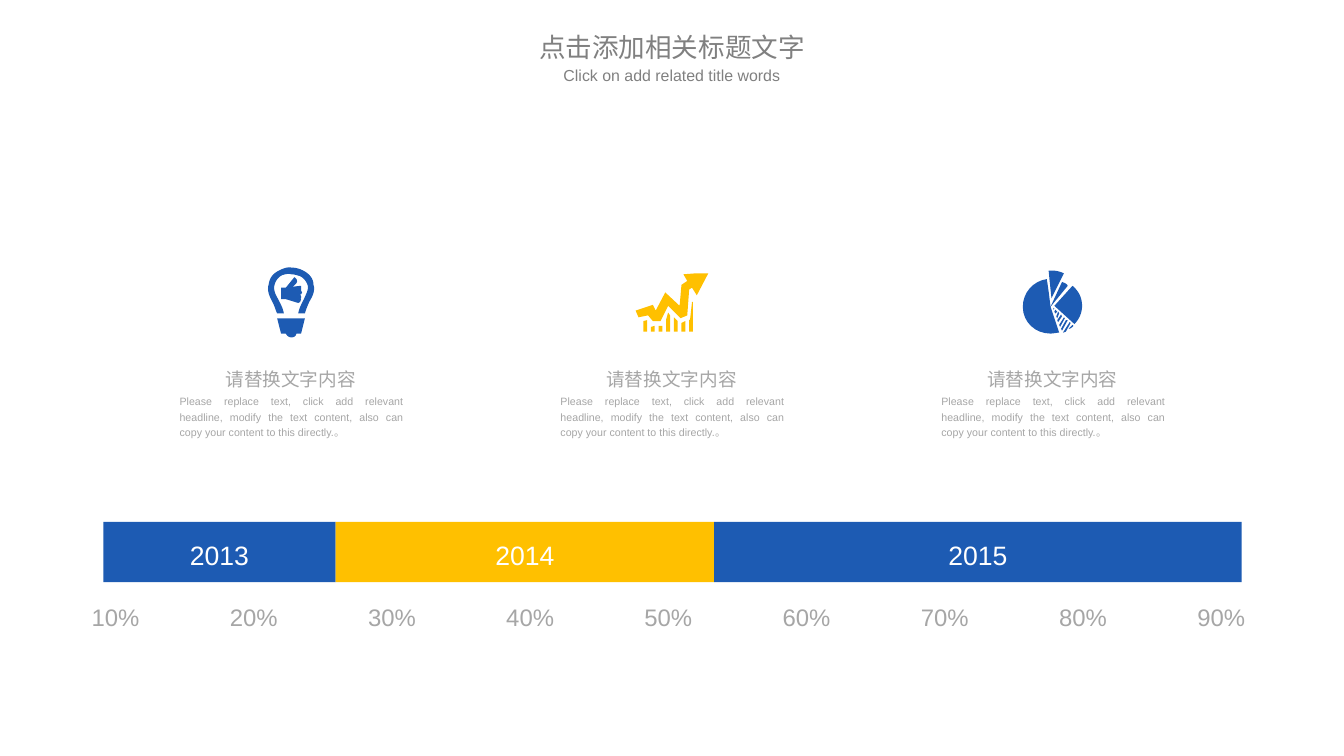
from dataclasses import dataclass

from lxml import etree
from pptx import Presentation
from pptx.dml.color import RGBColor
from pptx.enum.shapes import MSO_SHAPE
from pptx.enum.text import MSO_ANCHOR, MSO_AUTO_SIZE, PP_ALIGN
from pptx.oxml.ns import qn
from pptx.shapes.base import BaseShape
from pptx.slide import Slide
from pptx.text.text import TextFrame
from pptx.util import Pt

RECTANGLE = MSO_SHAPE.RECTANGLE
TOP, MIDDLE = MSO_ANCHOR.TOP, MSO_ANCHOR.MIDDLE
CENTER, JUSTIFY = PP_ALIGN.CENTER, PP_ALIGN.JUSTIFY
FIXED, GROW = MSO_AUTO_SIZE.NONE, MSO_AUTO_SIZE.SHAPE_TO_FIT_TEXT

Step = tuple[float, ...]
Contour = list[Step]


@dataclass(frozen=True)
class Theme:
    blue: str = "1D5BB3"
    gold: str = "FFC000"
    title: str = "808080"
    muted: str = "A6A6A6"
    white: str = "FFFFFF"
    latin: str = "Arial"
    chinese: str = "Noto Sans CJK SC"
    title_size: float = 20
    subtitle_size: float = 12
    year_size: float = 20
    percent_size: float = 18
    heading_size: float = 14
    body_size: float = 8
    line_spacing: float = 1.2


@dataclass(frozen=True)
class Box:
    left: float
    top: float
    width: float
    height: float


@dataclass(frozen=True)
class Icon:
    left: float
    top: float
    color: str
    contours: list[Contour]


@dataclass(frozen=True)
class Period:
    year: str
    width: float
    color: str


THEME = Theme()
SLIDE_WIDTH, SLIDE_HEIGHT = 1012.3, 569.5
ICON_UNIT = 0.72
CURVE_STEPS = 8
COLUMN_COUNT, COLUMN_PITCH = 3, 286.9
PERCENT_PITCH = 104.1
BAR_LEFT, BAR_TOP, BAR_HEIGHT = 77.8, 393.1, 45.4
HEADING = "请替换文字内容"
BODY = ("Please replace text, click add relevant headline, modify the text content, "
        "also can copy your content to this directly.。")

PERIODS = [
    Period("2013", 175, THEME.blue),
    Period("2014", 285.1, THEME.gold),
    Period("2015", 397.4, THEME.blue),
]

BULB: list[Contour] = [
    [(11, 54), (40, 54), (36, 70), (31, 70), (31, 72, 29, 74, 26, 74),
     (23, 74, 21, 72, 20, 70), (15, 70)],
    [(36, 20), (36, 25), (37, 27), (36, 29), (35, 29), (36, 31), (36, 33), (35, 34),
     (36, 34), (35, 37), (33, 38), (20, 34), (15, 34), (15, 22), (20, 22), (29, 11),
     (35, 15, 30, 19, 27, 21)],
    [(11, 49), (18, 49), (17, 43, 14, 38, 12, 34), (9, 29, 7, 24, 8, 20),
     (9, 15, 12, 11, 16, 9), (19, 8, 22, 7, 26, 8), (29, 8, 32, 9, 35, 10),
     (39, 12, 42, 16, 43, 20), (44, 24, 41, 29, 39, 34), (37, 38, 34, 43, 33, 49),
     (40, 49), (41, 45, 43, 40, 45, 36), (48, 31, 51, 25, 49, 19),
     (49, 12, 44, 7, 38, 4), (34, 2, 30, 1, 26, 1), (22, 0, 17, 2, 13, 4),
     (7, 7, 3, 11, 2, 19), (0, 25, 3, 31, 6, 37), (8, 40, 9, 45, 11, 49)],
]

ARROW: Contour = [
    (76, 0), (64, 23), (59, 15), (56, 17), (54, 44), (47, 47), (34, 34), (26, 50),
    (18, 50), (13, 44), (3, 46), (0, 39), (18, 33), (21, 39), (31, 20), (46, 34),
    (48, 12), (54, 8), (50, 1), (63, 0),
]
COLUMN_TOPS: list[Contour] = [
    [(4, 49), (0, 50)], [(4, 55), (0, 56)], [(4, 55), (0, 55)],
    [(4, 44), (2, 41), (0, 48)], [(4, 50), (0, 46)], [(4, 50), (0, 52)],
    [(4, 30), (3, 30), (1, 48), (0, 49)],
]
GROWTH: list[Contour] = [ARROW] + [
    [(8 * number + x, y) for x, y in [(0, 61), (4, 61), *tops]]
    for number, tops in enumerate(COLUMN_TOPS, start=1)
]

PIE: list[Contour] = [
    [(52, 16), (58, 21, 62, 28, 62, 37), (62, 44, 59, 51, 54, 56), (33, 37)],
    [(53, 58), (52, 59, 50, 61, 48, 61), (52, 57)],
    [(45, 64), (50, 55), (49, 54), (42, 65)],
    [(41, 63), (47, 52), (45, 52), (40, 61)],
    [(39, 59), (44, 50), (43, 49), (38, 57)],
    [(37, 54), (41, 48), (40, 46), (36, 52)],
    [(36, 50), (38, 45), (37, 43), (35, 48)],
    [(34, 45), (36, 43), (34, 41), (33, 43)],
    [(32, 41), (32, 39), (33, 40)],
    [(41, 12), (29, 38), (29, 38, 27, 20, 25, 9), (11, 11, 0, 23, 0, 38),
     (0, 54, 13, 66, 29, 66), (32, 66, 36, 65, 38, 65), (29, 38), (47, 16),
     (46, 14, 44, 13, 41, 12)],
    [(30, 0), (27, 0), (28, 11, 30, 29, 30, 29), (43, 3), (39, 1, 34, 0, 30, 0)],
]

ICONS = [
    Icon(200.9, 200.9, THEME.blue, BULB),
    Icon(478.8, 205.9, THEME.gold, GROWTH),
    Icon(770.4, 203.8, THEME.blue, PIE),
]


def write(frame: TextFrame, text: str, size: float, color: str, align: PP_ALIGN,
          spacing: float = THEME.line_spacing, latin: str = THEME.latin) -> None:
    frame.text = text
    paragraph = frame.paragraphs[0]
    paragraph.alignment = align
    paragraph.line_spacing = spacing
    font = paragraph.runs[0].font
    font.size = Pt(size)
    font.name = latin
    font.color.rgb = RGBColor.from_string(color)
    east_asian = etree.SubElement(paragraph.runs[0]._r.get_or_add_rPr(), qn("a:ea"))
    east_asian.set("typeface", THEME.chinese)


def add_text(slide: Slide, box: Box, text: str, size: float, color: str = THEME.muted,
             align: PP_ALIGN = JUSTIFY, wrap: bool = False,
             fit: MSO_AUTO_SIZE = GROW, spacing: float = THEME.line_spacing) -> None:
    frame = slide.shapes.add_textbox(
        Pt(box.left), Pt(box.top), Pt(box.width), Pt(box.height)).text_frame
    frame.word_wrap = wrap
    frame.auto_size = fit
    write(frame, text, size, color, align, spacing)


def paint(shape: BaseShape, color: str) -> None:
    shape.shadow.inherit = False
    shape.fill.solid()
    shape.fill.fore_color.rgb = RGBColor.from_string(color)
    shape.line.fill.background()


def flatten(contour: Contour) -> Contour:
    points: Contour = []
    for step in contour:
        if len(step) == 2:
            points.append(step)
            continue
        anchors = [points[-1], step[:2], step[2:4], step[4:]]
        for index in range(1, CURVE_STEPS + 1):
            t = index / CURVE_STEPS
            weights = ((1 - t) ** 3, 3 * t * (1 - t) ** 2, 3 * t * t * (1 - t), t ** 3)
            points.append(tuple(sum(w * p[axis] for w, p in zip(weights, anchors))
                                for axis in (0, 1)))
    return points


def add_icon(slide: Slide, icon: Icon) -> None:
    outlines = [[(Pt(icon.left + x * ICON_UNIT), Pt(icon.top + y * ICON_UNIT))
                 for x, y in flatten(contour)] for contour in icon.contours]
    builder = slide.shapes.build_freeform(*outlines[0][0])
    for number, outline in enumerate(outlines):
        if number:
            builder.move_to(*outline[0])
        builder.add_line_segments(outline[1:], close=True)
    paint(builder.convert_to_shape(), icon.color)


def add_title(slide: Slide) -> None:
    title = slide.shapes.title
    title.left, title.top, title.width, title.height = (
        Pt(385.6), Pt(20.9), Pt(241.2), Pt(29.5))
    frame = title.text_frame
    frame.auto_size = FIXED
    frame.vertical_anchor = MIDDLE
    write(frame, "点击添加相关标题文字", THEME.title_size, THEME.title, CENTER, 1, THEME.chinese)
    add_text(slide, Box(414.7, 46.1, 182.9, 29.5), "Click on add related title words",
             THEME.subtitle_size, THEME.title, CENTER, True, FIXED, 1)


def add_timeline(slide: Slide) -> None:
    left = BAR_LEFT
    for period in PERIODS:
        bar = slide.shapes.add_shape(
            RECTANGLE, Pt(left), Pt(BAR_TOP), Pt(period.width), Pt(BAR_HEIGHT))
        paint(bar, period.color)
        bar.text_frame.vertical_anchor = MIDDLE
        write(bar.text_frame, period.year, THEME.year_size, THEME.white, CENTER)
        left += period.width
    for index in range(9):
        add_text(slide, Box(61.9 + index * PERCENT_PITCH, 446.4, 51.1, 31),
                 f"{(index + 1) * 10}%", THEME.percent_size)


def main() -> None:
    deck = Presentation()
    deck.slide_width, deck.slide_height = Pt(SLIDE_WIDTH), Pt(SLIDE_HEIGHT)
    slide = deck.slides.add_slide(deck.slide_layouts[5])
    add_title(slide)
    add_timeline(slide)
    for icon in ICONS:
        add_icon(slide, icon)
    for column in range(COLUMN_COUNT):
        shift = column * COLUMN_PITCH
        add_text(slide, Box(162.7 + shift, 270, 113.8, 25.9), HEADING, THEME.heading_size)
        add_text(slide, Box(128.2 + shift, 292.3, 182.9, 42.5), BODY, THEME.body_size, wrap=True)
    deck.save("out.pptx")


if __name__ == "__main__":
    main()
